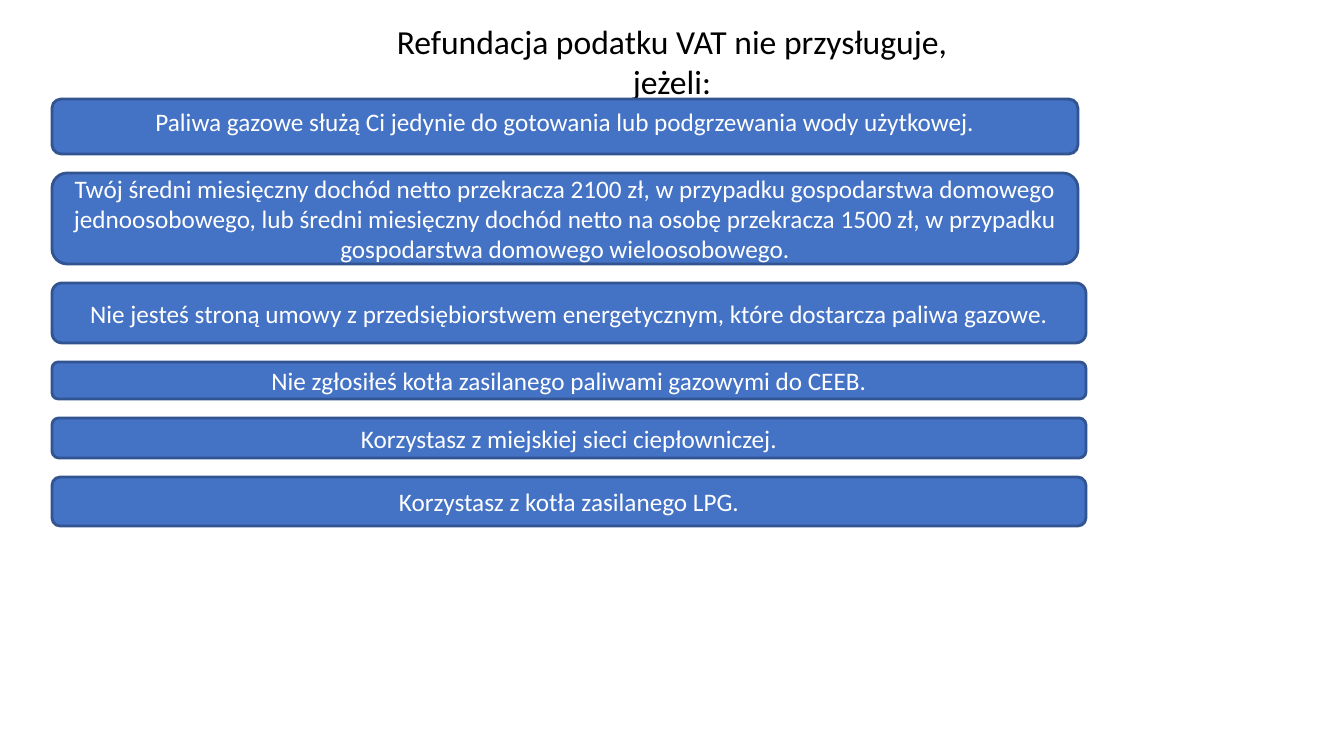
"""Builds a slide listing the cases in which the VAT refund is not due."""
import pptx
import pptx.dml.color
import pptx.enum.shapes
import pptx.enum.text
import pptx.util

SCALE = 914400 / 100.8
ANCHOR = pptx.enum.text.MSO_ANCHOR


def px(n):
    return pptx.util.Emu(round(n * SCALE))


def write(frame, text, size, color, form):
    for key, value in form.items():
        setattr(frame, key, value)
    frame.text = text
    para = frame.paragraphs[0]
    para.alignment = pptx.enum.text.PP_ALIGN.CENTER
    para.font.name = "Calibri"
    para.font.size = pptx.util.Pt(size)
    para.font.color.rgb = pptx.dml.color.RGBColor.from_string(color)


deck = pptx.Presentation()
deck.slide_width, deck.slide_height = px(1344), px(756)
slide = deck.slides.add_slide(deck.slide_layouts[5])

title = slide.shapes.title
title.left, title.top, title.width, title.height = px(344), px(16), px(656), px(50)
write(title.text_frame, "Refundacja podatku VAT nie przysługuje, jeżeli:", 24, "000000", {
    "word_wrap": False,
    "vertical_anchor": ANCHOR.TOP,
    "auto_size": pptx.enum.text.MSO_AUTO_SIZE.NONE,
})

middle = {"word_wrap": True, "vertical_anchor": ANCHOR.MIDDLE}
upper = {"word_wrap": True, "vertical_anchor": ANCHOR.TOP, "margin_top": px(5)}
cases = [
    (1026, 55, upper, "Paliwa gazowe służą Ci jedynie do gotowania lub podgrzewania wody użytkowej."),
    (1026, 91, middle, "Twój średni miesięczny dochód netto przekracza 2100 zł, w przypadku "
     "gospodarstwa domowego jednoosobowego, lub średni miesięczny dochód netto na osobę "
     "przekracza 1500 zł, w przypadku gospodarstwa domowego wieloosobowego."),
    (1034, 60, middle, "Nie jesteś stroną umowy z przedsiębiorstwem energetycznym, "
     "które dostarcza paliwa gazowe."),
    (1034, 37, middle, "Nie zgłosiłeś kotła zasilanego paliwami gazowymi do CEEB."),
    (1034, 40, middle, "Korzystasz z miejskiej sieci ciepłowniczej."),
    (1034, 49, middle, "Korzystasz z kotła zasilanego LPG."),
]
left, top, gap = 52, 99, 19
for width, height, form, text in cases:
    box = slide.shapes.add_shape(pptx.enum.shapes.MSO_SHAPE.ROUNDED_RECTANGLE,
                                 px(left), px(top), px(width), px(height))
    box.shadow.inherit = False
    box.fill.solid()
    box.fill.fore_color.rgb = pptx.dml.color.RGBColor.from_string("4472C4")
    box.line.color.rgb = pptx.dml.color.RGBColor.from_string("325491")
    box.line.width = pptx.util.Pt(2)
    write(box.text_frame, text, 18, "FFFFFF", form)
    top += height + gap

deck.save("out.pptx")
